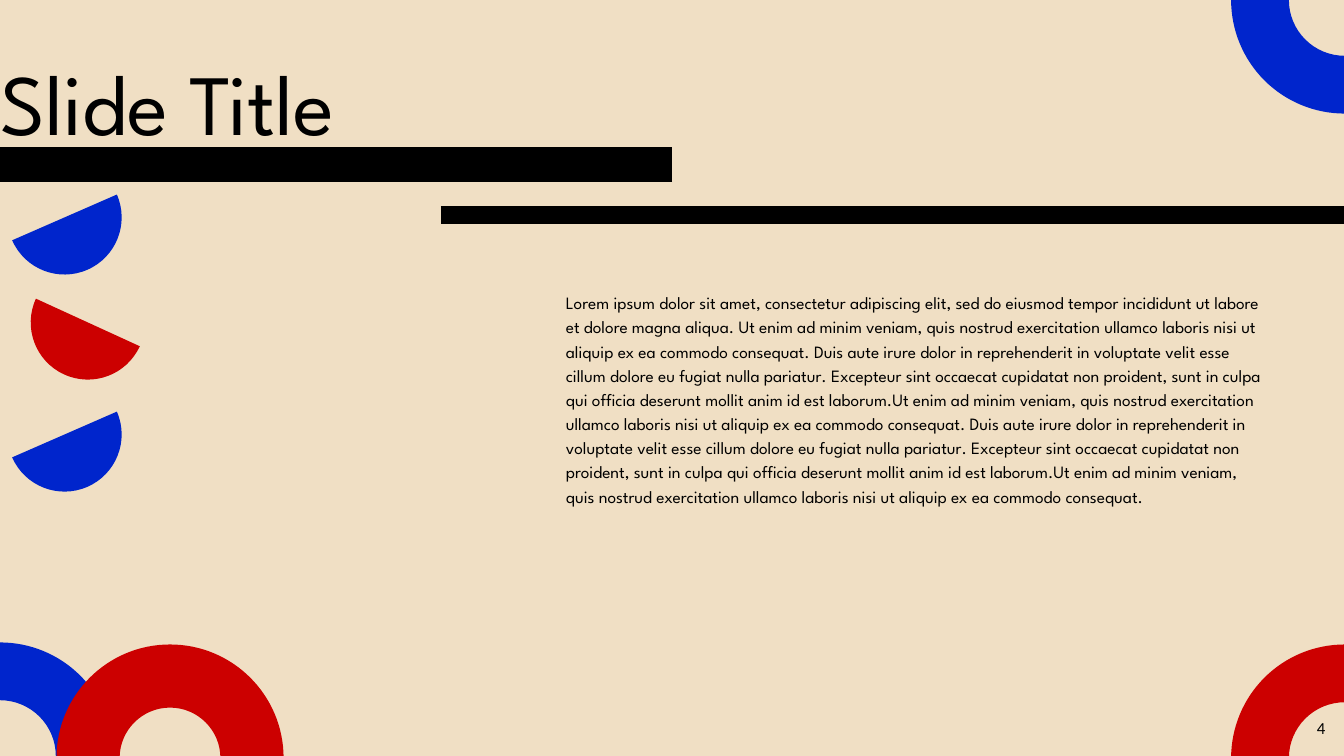
from dataclasses import dataclass
from math import cos, radians, sin, tan

from lxml import etree
from pptx import Presentation
from pptx.dml.color import RGBColor
from pptx.enum import shapes, text
from pptx.oxml.ns import qn
from pptx.util import Inches, Pt


@dataclass(frozen=True)
class Theme:
    sand: RGBColor = RGBColor(0xF0, 0xDF, 0xC4)
    blue: RGBColor = RGBColor(0x00, 0x25, 0xCC)
    red: RGBColor = RGBColor(0xCC, 0x00, 0x00)
    black: RGBColor = RGBColor(0, 0, 0)
    font: str = "League Spartan"
    number_font: str = "Calibri"
    title_size: float = 92
    body_size: float = 18.5
    number_size: float = 18


THEME = Theme()
Point = tuple[float, float]


@dataclass(frozen=True)
class Bar:
    start: float
    end: float
    y: float
    weight: float


@dataclass(frozen=True)
class Arc:
    """Ring sector opening clockwise from the left; inner 0 gives a half disc."""
    left: float
    top: float
    color: RGBColor
    rotation: float = 0
    sweep: float = 90
    outer: float = 1.69
    inner: float = 0.83


@dataclass(frozen=True)
class Label:
    words: str
    left: float
    top: float
    width: float
    height: float
    size: float
    font: str = THEME.font
    line_spacing: float | None = None
    inset: bool = False


BARS = [Bar(10, 0, 2.45, 36.75), Bar(6.56, 20, 3.2, 18.75)]

HALF_DISCS = [
    Arc(0.28, top, color, rotation, 180, 0.85, 0)
    for top, color, rotation in [
        (3.2, THEME.blue, 156.4),
        (4.76, THEME.red, 204.6),
        (6.43, THEME.blue, 156.4),
    ]
]

CORNER_RINGS = [
    Arc(0, 9.56, THEME.blue, 90),
    Arc(0.84, 9.59, THEME.red, sweep=180, inner=0.75),
    Arc(18.32, 0, THEME.blue, 270),
    Arc(18.32, 9.59, THEME.red),
]

VENIAM = (
    "Ut enim ad minim veniam, quis nostrud exercitation ullamco laboris nisi "
    "ut aliquip ex ea commodo consequat."
)
DUIS = (
    " Duis aute irure dolor in reprehenderit in voluptate velit esse cillum "
    "dolore eu fugiat nulla pariatur. Excepteur sint occaecat cupidatat non "
    "proident, sunt in culpa qui officia deserunt mollit anim id est laborum."
)
BODY = (
    "Lorem ipsum dolor sit amet, consectetur adipiscing elit, sed do eiusmod "
    "tempor incididunt ut labore et dolore magna aliqua. "
    + (VENIAM + DUIS) * 2 + VENIAM
)

LABELS = [
    Label("4", 19.5, 10.63, 0.27, 0.4, THEME.number_size, THEME.number_font, inset=True),
    Label(BODY, 8.42, 4.3, 10.45, 4.23, THEME.body_size, line_spacing=25.9),
    Label("Slide Title", 0, 0.49, 8.42, 1.71, THEME.title_size, line_spacing=128.8),
]


def draw_bar(slide, bar: Bar) -> None:
    y = Inches(bar.y)
    rule = slide.shapes.add_connector(
        shapes.MSO_CONNECTOR.STRAIGHT, Inches(bar.start), y, Inches(bar.end), y
    )
    rule.line.color.rgb = THEME.black
    rule.line.width = Pt(bar.weight)
    etree.SubElement(rule._element.spPr, qn("a:effectLst"))


def arc_points(arc: Arc, radius: float) -> list[Point]:
    """Start point, then two Bézier curves of three points each."""
    step = radians(arc.sweep / 2)
    pull = 4 / 3 * tan(step / 4)

    def at(angle: float, lead: float) -> Point:
        x = cos(angle) - lead * sin(angle)
        y = sin(angle) + lead * cos(angle)
        return (
            Inches(arc.left + arc.outer + radius * x),
            Inches(arc.top + arc.outer + radius * y),
        )

    start = radians(180)
    points = [at(start, 0)]
    for angle in (start, start + step):
        points += [at(angle, pull), at(angle + step, -pull), at(angle + step, 0)]
    return points


def curve_segments(sector, firsts: list[int]) -> None:
    """Join three straight segments into one Bézier curve at each first index."""
    lines = list(sector._element.iter(qn("a:lnTo")))
    for first in firsts:
        curve = lines[first]
        for line in lines[first + 1:first + 3]:
            curve.append(line[0])
            line.getparent().remove(line)
        curve.tag = qn("a:cubicBezTo")


def draw_arc(slide, arc: Arc) -> None:
    outline = arc_points(arc, arc.outer)
    firsts = [0, 3]
    if arc.inner:
        outline += reversed(arc_points(arc, arc.inner))
        firsts += [7, 10]
    builder = slide.shapes.build_freeform(*outline[0])
    builder.add_line_segments(outline[1:], close=True)
    sector = builder.convert_to_shape()
    curve_segments(sector, firsts)
    sector.rotation = arc.rotation
    sector.fill.solid()
    sector.fill.fore_color.rgb = arc.color
    sector.line.fill.background()
    sector.shadow.inherit = False


def draw_label(slide, label: Label) -> None:
    box = slide.shapes.add_textbox(
        Inches(label.left), Inches(label.top), Inches(label.width), Inches(label.height)
    )
    frame = box.text_frame
    frame.word_wrap = True
    frame.auto_size = text.MSO_AUTO_SIZE.SHAPE_TO_FIT_TEXT
    if not label.inset:
        frame.margin_left = frame.margin_right = 0
        frame.margin_top = frame.margin_bottom = 0
    paragraph = frame.paragraphs[0]
    paragraph.text = label.words
    if label.line_spacing:
        paragraph.line_spacing = Pt(label.line_spacing)
    paragraph.font.name = label.font
    paragraph.font.size = Pt(label.size)
    paragraph.font.color.rgb = THEME.black


def main() -> None:
    deck = Presentation()
    deck.slide_width, deck.slide_height = Inches(20), Inches(11.25)
    slide = deck.slides.add_slide(deck.slide_layouts[6])
    slide.background.fill.solid()
    slide.background.fill.fore_color.rgb = THEME.sand

    for bar in BARS:
        draw_bar(slide, bar)
    for arc in HALF_DISCS + CORNER_RINGS:
        draw_arc(slide, arc)
    for label in LABELS:
        draw_label(slide, label)

    deck.save("out.pptx")


if __name__ == "__main__":
    main()
